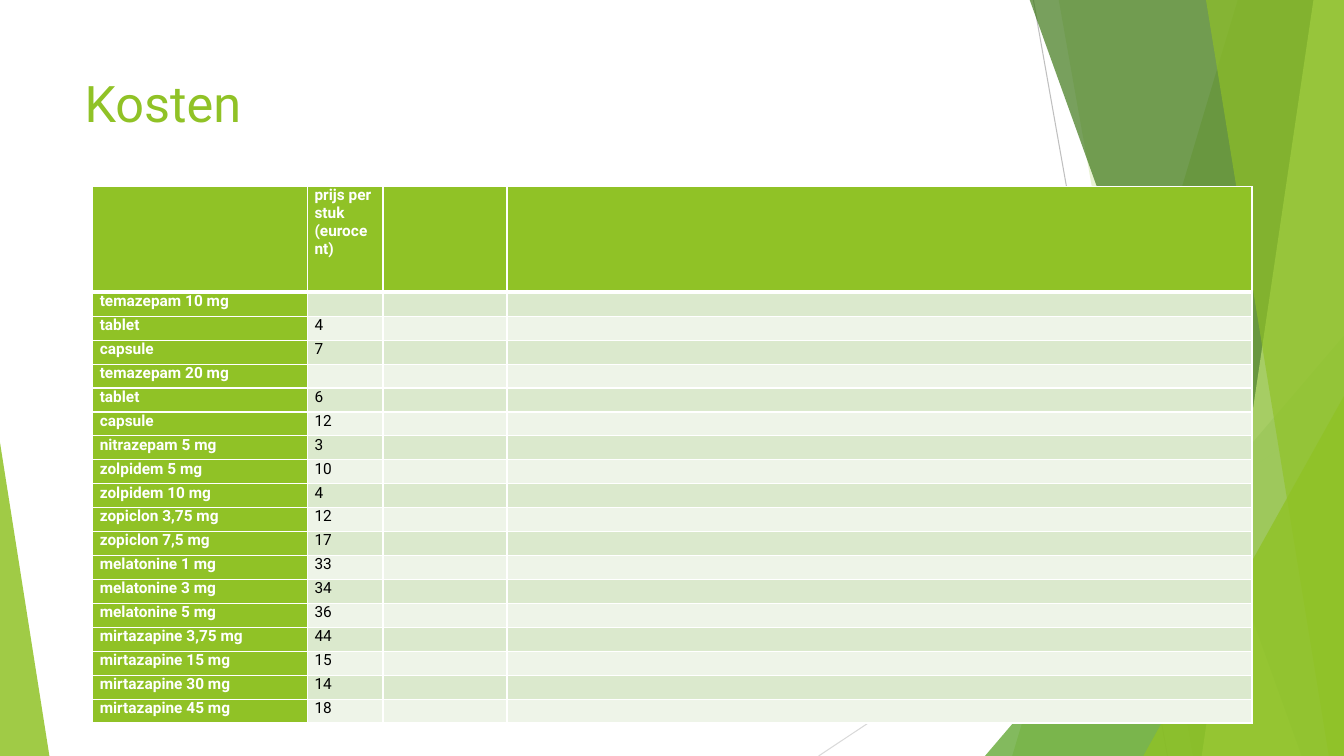
from lxml import etree
from pptx import Presentation
from pptx.dml.color import RGBColor
from pptx.enum.shapes import MSO_CONNECTOR, MSO_SHAPE
from pptx.enum.text import MSO_ANCHOR
from pptx.oxml.ns import qn
from pptx.util import Emu, Pt

STRAIGHT = MSO_CONNECTOR.STRAIGHT
TRIANGLE = MSO_SHAPE.ISOSCELES_TRIANGLE
TOP = MSO_ANCHOR.TOP
FONT = "Roboto"
GREEN = "90C226"
WHITE = "FFFFFF"
BLACK = "000000"
STRIPES = ["EEF4E8", "DBE9CD"]

deck = Presentation()
deck.slide_width = Emu(12192000)
deck.slide_height = Emu(6858000)
COLUMNS, ROWS = 1333, 750
column = deck.slide_width // COLUMNS
row = deck.slide_height // ROWS
slide = deck.slides.add_slide(deck.slide_layouts[6])
shapes = slide.shapes


def paint(fill, color):
    fill.solid()
    fill.fore_color.rgb = RGBColor.from_string(color)


def write(frame, text, size=11, color=BLACK, bold=False):
    frame.word_wrap = True
    para = frame.paragraphs[0]
    if text:
        span = para.add_run()
        span.text = text
        span.font.name = FONT
        span.font.size = Pt(size)
        span.font.bold = bold
        paint(span.font.fill, color)
    else:
        etree.SubElement(para._p, qn("a:endParaRPr"), sz=str(size * 100))


for x1, y1, x2, y2, color in [
    (1025, 0, 1158, ROWS, "BFBFBF"),
    (COLUMNS, 403, 812, ROWS, "D9D9D9"),
]:
    line = shapes.add_connector(STRAIGHT, x1 * column, y1 * row, x2 * column, y2 * row)
    paint(line.line.fill, color)
    line.line.width = Pt(0.75)
    etree.SubElement(line.element.spPr, qn("a:effectLst"))

facets = [
    ("band", (1228, 1004), GREEN, 30),
    ("band", (1050, 1183), GREEN, 20),
    ("triangle", (977, 333, 356, 1), "54A021", 72),
    ("band", (1021, 1291), "3F7819", 70),
    ("band", (1303, 1192), "C0E474", 70),
    ("band", (1196, 1318), GREEN, 65),
    ("triangle", (1134, 393, 199, 1), GREEN, 80),
    ("triangle", (0, 439, 49, 0), GREEN, 85),
]
for kind, place, color, opacity in facets:
    if kind == "band":
        upper, lower = place
        builder = shapes.build_freeform(upper * column, -row)
        corners = [(COLUMNS, -1), (COLUMNS, ROWS), (lower, ROWS)]
        builder.add_line_segments([(x * column, y * row) for x, y in corners], close=True)
        facet = builder.convert_to_shape()
    else:
        left, top, width, apex = place
        facet = shapes.add_shape(
            TRIANGLE, left * column, top * row, width * column, (ROWS - top) * row
        )
        facet.adjustments[0] = apex
    paint(facet.fill, color)
    tint = facet.element.spPr.find(qn("a:solidFill"))[0]
    etree.SubElement(tint, qn("a:alpha"), val=str(opacity * 1000))
    facet.line.fill.background()
    facet.shadow.inherit = False

title = shapes.add_textbox(74 * column, 67 * row, 940 * column, 144 * row)
title.text_frame.vertical_anchor = TOP
write(title.text_frame, "Kosten", size=36, color=GREEN)

prices = [
    ("", "prijs per stuk (eurocent)"),
    ("temazepam 10 mg", ""),
    ("tablet", "4"),
    ("capsule", "7"),
    ("temazepam 20 mg", ""),
    ("tablet", "6"),
    ("capsule", "12"),
    ("nitrazepam 5 mg", "3"),
    ("zolpidem 5 mg", "10"),
    ("zolpidem 10 mg", "4"),
    ("zopiclon 3,75 mg", "12"),
    ("zopiclon 7,5 mg", "17"),
    ("melatonine 1 mg", "33"),
    ("melatonine 3 mg", "34"),
    ("melatonine 5 mg", "36"),
    ("mirtazapine 3,75 mg", "44"),
    ("mirtazapine 15 mg", "15"),
    ("mirtazapine 30 mg", "14"),
    ("mirtazapine 45 mg", "18"),
]
widths = [213, 75, 123, 739]
table_height, header_height = 533, 105
body_height = (table_height - header_height) / (len(prices) - 1)

table = shapes.add_table(
    len(prices), len(widths), 92 * column, 185 * row, sum(widths) * column, table_height * row
).table
for index, width in enumerate(widths):
    table.columns[index].width = width * column

for r, price in enumerate(prices):
    table.rows[r].height = Emu(int((body_height if r else header_height) * row))
    for c in range(len(widths)):
        cell = table.cell(r, c)
        heading = r == 0 or c == 0
        cell.margin_left = cell.margin_right = 7 * column
        cell.margin_top = cell.margin_bottom = 0
        cell.vertical_anchor = TOP
        text = price[c] if c < len(price) else ""
        write(cell.text_frame, text, color=WHITE if heading else BLACK, bold=heading)
        for side in "LRTB":
            thick = (r, side) in [(0, "B"), (1, "T")]
            border = etree.SubElement(
                cell._tc.get_or_add_tcPr(), qn(f"a:ln{side}"), w=str(Pt(3 if thick else 1))
            )
            solid = etree.SubElement(border, qn("a:solidFill"))
            etree.SubElement(solid, qn("a:srgbClr"), val=WHITE)
        paint(cell.fill, GREEN if heading else STRIPES[r % 2])

deck.save("out.pptx")
